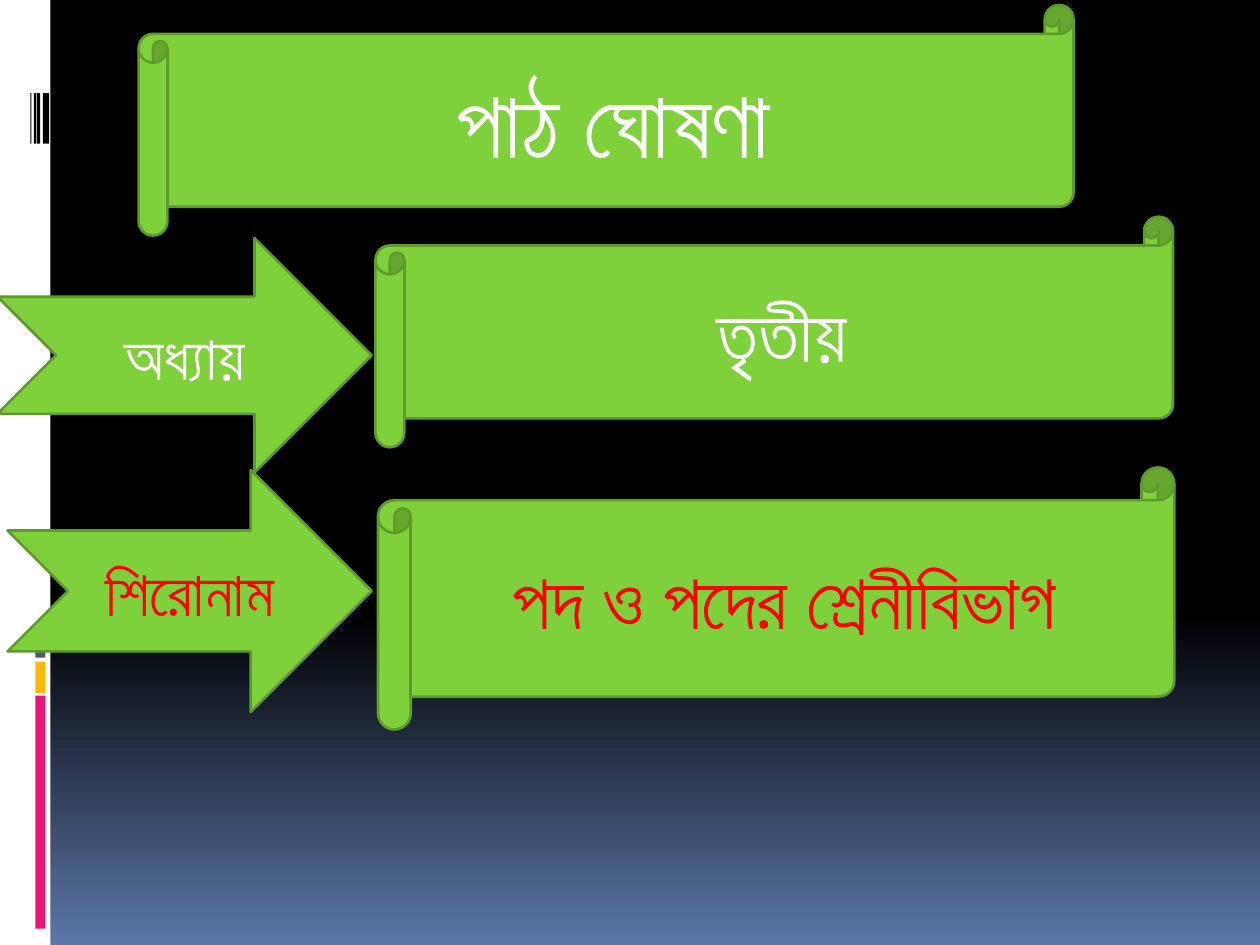
import pptx
import pptx.dml.color
import pptx.enum.shapes
import pptx.enum.text
import pptx.util
from dataclasses import dataclass

SHAPE = pptx.enum.shapes.MSO_SHAPE
COLS, ROWS = 100, 75


@dataclass(frozen=True)
class Theme:
    font: str = "Calibri"
    title: int = 54
    value: int = 44
    label: int = 36
    edge: float = 1.5
    white: str = "FFFFFF"
    black: str = "000000"
    red: str = "FF0000"
    green: str = "7FD13B"
    dark_green: str = "5E9B2C"
    pink: str = "EA157A"
    yellow: str = "FEB80A"
    slate: str = "4E5B6F"
    blue: str = "5B77A8"


THEME = Theme()


def rgb(color):
    return pptx.dml.color.RGBColor.from_string(color)


def add_block(s, grid, kind, box, fill, line=None):
    """Add a filled preset shape; box is left, top, width, height in grid cells."""
    col, row = grid
    x, y, w, h = box
    sp = s.shapes.add_shape(kind, int(x * col), int(y * row), int(w * col), int(h * row))
    sp.shadow.inherit = False
    sp.fill.solid()
    sp.fill.fore_color.rgb = rgb(fill)
    if line:
        sp.line.color.rgb = rgb(line)
        sp.line.width = pptx.util.Pt(THEME.edge)
    else:
        sp.line.fill.background()
    return sp


def add_banner(s, grid, kind, box, text, size, color):
    """Add a green scroll or arrow with one centred line of text."""
    sp = add_block(s, grid, kind, box, THEME.green, THEME.dark_green)
    tf = sp.text_frame
    tf.word_wrap = True
    tf.vertical_anchor = pptx.enum.text.MSO_ANCHOR.MIDDLE
    p = tf.paragraphs[0]
    p.alignment = pptx.enum.text.PP_ALIGN.CENTER
    r = p.add_run()
    r.text = text
    r.font.name = THEME.font
    r.font.size = pptx.util.Pt(size)
    r.font.color.rgb = rgb(color)


def paint_background(s):
    fill = s.background.fill
    fill.gradient()
    fill.gradient_angle = 270
    stops = ((0.65, THEME.black), (1, THEME.blue))
    for stop, (position, color) in zip(fill.gradient_stops, stops):
        stop.position = position
        stop.color.rgb = rgb(color)


def add_side_strip(s, grid, box):
    """Add the white strip with its coloured bars and barcode."""
    x, y, w, h = box
    add_block(s, grid, SHAPE.RECTANGLE, box, THEME.white)
    bars = ((55.2, 18.5, THEME.pink), (52.5, 2.5, THEME.yellow),
            (50.7, 1.5, THEME.slate), (49.7, 0.8, THEME.pink))
    for top, height, color in bars:
        add_block(s, grid, SHAPE.RECTANGLE,
                  (x + 0.7 * w, y + top, 0.2 * w, height), color)
    for left, width in ((3.4, 0.5), (2.9, 0.3), (2.7, 0.15), (2.4, 0.1)):
        add_block(s, grid, SHAPE.RECTANGLE,
                  (x + left, y + 7.4, width, 4), THEME.black)


def add_entry(s, grid, arrow_box, scroll_box, label, value, color):
    """Add a label arrow pointing at the scroll that holds its value."""
    add_banner(s, grid, SHAPE.NOTCHED_RIGHT_ARROW, arrow_box, label, THEME.label, color)
    add_banner(s, grid, SHAPE.HORIZONTAL_SCROLL, scroll_box, value, THEME.value, color)


def main():
    prs = pptx.Presentation()
    prs.slide_width = pptx.util.Inches(10)
    prs.slide_height = pptx.util.Inches(7.5)
    grid = prs.slide_width / COLS, prs.slide_height / ROWS
    s = prs.slides.add_slide(prs.slide_layouts[6])
    paint_background(s)
    add_side_strip(s, grid, (0, 0, 4, ROWS))
    add_banner(s, grid, SHAPE.HORIZONTAL_SCROLL, (11, 0.4, 74.2, 18.3),
               "পাঠ ঘোষণা", THEME.title, THEME.white)
    add_entry(s, grid, (-0.2, 18.9, 29.7, 18.6), (29.8, 17.2, 63.3, 18.3),
              "অধ্যায়", "তৃতীয়", THEME.white)
    add_entry(s, grid, (0.6, 37.3, 28.9, 19.2), (30, 37.1, 63.2, 20.8),
              "শিরোনাম", "পদ ও পদের শ্রেনীবিভাগ", THEME.red)
    prs.save("out.pptx")


if __name__ == "__main__":
    main()
